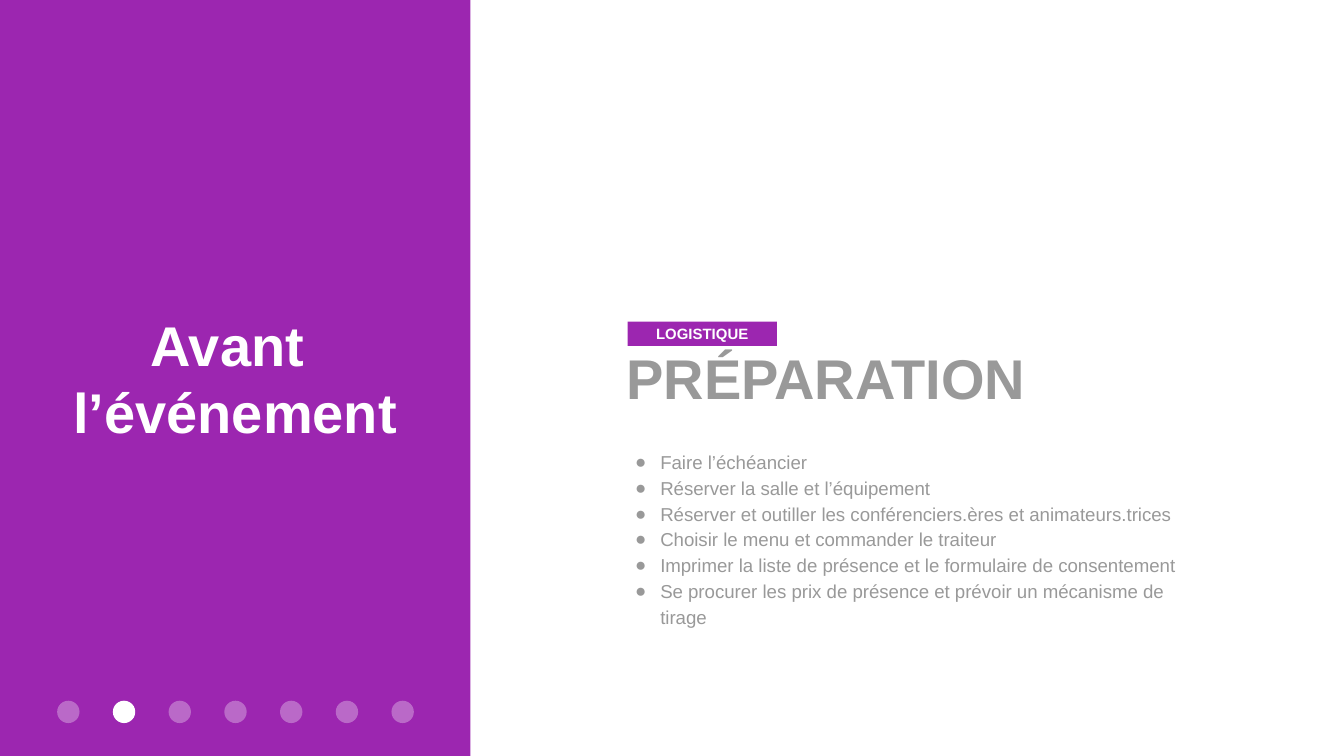
"""Build the slide on preparing the logistics before an event."""
import pptx
import pptx.dml.color
import pptx.enum.shapes
import pptx.enum.text
import pptx.oxml
import pptx.oxml.ns
import pptx.util

Pt = pptx.util.Pt
Shape = pptx.enum.shapes.MSO_SHAPE
Align = pptx.enum.text.PP_ALIGN
Anchor = pptx.enum.text.MSO_ANCHOR
Fit = pptx.enum.text.MSO_AUTO_SIZE

PURPLE, WHITE, GREY = "9C26B0", "FFFFFF", "999999"
TASKS = [
    "Faire l’échéancier",
    "Réserver la salle et l’équipement",
    "Réserver et outiller les conférenciers.ères et animateurs.trices",
    "Choisir le menu et commander le traiteur",
    "Imprimer la liste de présence et le formulaire de consentement",
    "Se procurer les prix de présence et prévoir un mécanisme de tirage",
]


def color(code):
    return pptx.dml.color.RGBColor.from_string(code)


def node(tag, **attrs):
    item = pptx.oxml.parse_xml(f"<a:{tag} {pptx.oxml.ns.nsdecls('a')}/>")
    for name, value in attrs.items():
        item.set(name, str(value))
    return item


class Deck:
    def __init__(self, slide, font="Arial"):
        self.slide = slide
        self.font = font
        slide.background.fill.solid()
        slide.background.fill.fore_color.rgb = color(PURPLE)

    def place(self, item, box):
        item.left, item.top, item.width, item.height = map(Pt, box)

    def letter(self, item, lines, size, ink, bold=False, align=Align.LEFT,
               anchor=Anchor.TOP, inset=7.2):
        frame = item.text_frame
        frame.word_wrap = True
        frame.auto_size = Fit.NONE
        frame.vertical_anchor = anchor
        frame.margin_left = frame.margin_right = Pt(inset)
        frame.margin_top = frame.margin_bottom = Pt(inset)
        for row, line in enumerate(lines):
            para = frame.add_paragraph() if row else frame.paragraphs[0]
            para.alignment = align
            para.space_before = Pt(0)
            run = para.add_run()
            run.text = line
            run.font.name = self.font
            run.font.size = Pt(size)
            run.font.bold = bold
            run.font.color.rgb = color(ink)

    def title(self, box, lines):
        item = self.slide.shapes.title
        self.place(item, box)
        self.letter(item, lines, 30, WHITE, True, Align.CENTER, Anchor.MIDDLE)

    def list(self, box, lines):
        item = self.slide.placeholders[1]
        self.place(item, box)
        self.letter(item, lines, 10, GREY)
        for para in item.text_frame.paragraphs:
            para.line_spacing = 1.15
            props = para._p.get_or_add_pPr()
            props.set("marL", str(Pt(18)))
            props.set("indent", str(Pt(-13.5)))
            tint = node("buClr")
            tint.append(node("srgbClr", val=GREY))
            props.append(tint)
            props.append(node("buFont", typeface=self.font))
            props.append(node("buChar", char="●"))

    def text(self, box, lines, size, ink):
        item = self.slide.shapes.add_textbox(*map(Pt, box))
        self.letter(item, lines, size, ink, True)

    def shape(self, kind, box, fill, alpha=100):
        item = self.slide.shapes.add_shape(kind, *map(Pt, box))
        item.shadow.inherit = False
        item.line.fill.background()
        item.fill.solid()
        item.fill.fore_color.rgb = color(fill)
        if alpha < 100:
            tint = item._element.spPr.find(".//" + pptx.oxml.ns.qn("a:srgbClr"))
            tint.append(node("alpha", val=alpha * 1000))
        return item

    def panel(self, box):
        item = self.shape(Shape.RECTANGLE, box, WHITE)
        self.slide.shapes.title._element.addprevious(item._element)

    def tag(self, box, label):
        item = self.shape(Shape.RECTANGLE, box, PURPLE)
        self.letter(item, [label], 8, WHITE, True, Align.CENTER, Anchor.MIDDLE, 0)

    def dots(self, left, top, size, step, count, active):
        for spot in range(count):
            box = (left + spot * step, top, size, size)
            self.shape(Shape.OVAL, box, WHITE, 100 if spot == active else 31)


def main():
    show = pptx.Presentation()
    show.slide_width, show.slide_height = Pt(720), Pt(405)
    deck = Deck(show.slides.add_slide(show.slide_layouts[1]))
    deck.panel((252, 0, 468, 405))
    deck.title((0, 131.8, 252, 141), ["Avant ", "l’événement"])
    deck.list((328.5, 232.6, 318, 141), TASKS)
    deck.text((328.5, 177, 268, 51), ["PRÉPARATION"], 30, GREY)
    deck.tag((336.25, 172.25, 80, 13), "LOGISTIQUE")
    deck.dots(30.6, 375.4, 12, 29.85, 7, 1)
    show.save("out.pptx")


if __name__ == "__main__":
    main()
